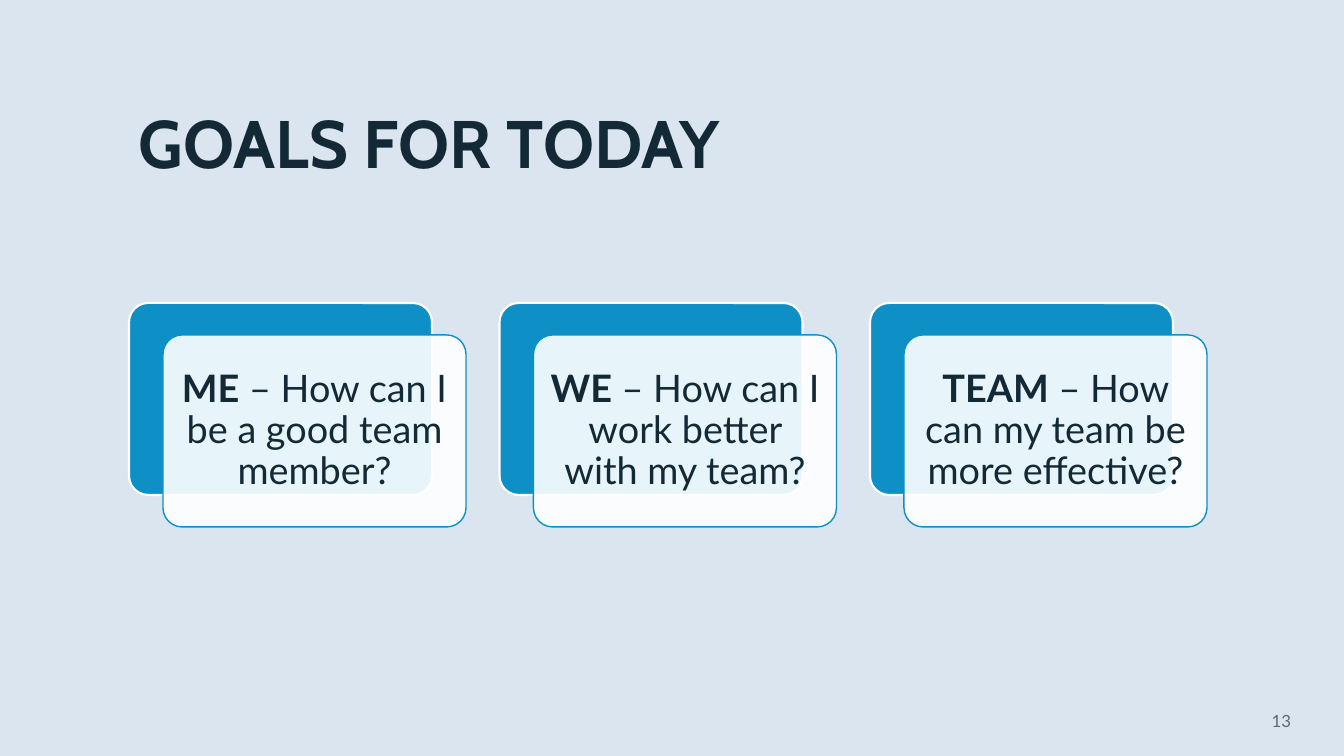
from pptx import Presentation
from pptx.dml.color import RGBColor
from pptx.enum.shapes import MSO_SHAPE
from pptx.enum.text import MSO_ANCHOR, PP_ALIGN
from pptx.oxml.ns import qn
from pptx.util import Emu, Pt
from lxml import etree

PX = 914400 / 100.8
BACKGROUND = RGBColor(0xDA, 0xE5, 0xEF)
INK = RGBColor(0x13, 0x29, 0x35)
GREY = RGBColor(0x5D, 0x68, 0x78)
BLUE = RGBColor(0x0E, 0x8F, 0xC5)
WHITE = RGBColor(0xFF, 0xFF, 0xFF)

CARD_W, CARD_H = 303, 192
CARD_LEFT, CARD_TOP = 129, 303
CARD_PITCH = 370.5
SHIFT_X, SHIFT_Y = 34, 32
GOALS = [
    ("ME", " – How can I be a good team member?"),
    ("WE", " – How can I work better with my team?"),
    ("TEAM", " – How can my team be more effective?"),
]


def px(*lengths):
    return [Emu(round(n * PX)) for n in lengths]


def write(shape, runs, size, font, color, anchor, align=PP_ALIGN.LEFT, spacing=1.0):
    """Fill the shape with one paragraph made of (text, bold) runs."""
    tf = shape.text_frame
    tf.word_wrap = True
    tf.vertical_anchor = anchor
    p = tf.paragraphs[0]
    p.alignment = align
    p.line_spacing = spacing
    for text, bold in runs:
        r = p.add_run()
        r.text = text
        r.font.size = Pt(size)
        r.font.name = font
        r.font.bold = bold
        r.font.color.rgb = color


prs = Presentation()
prs.slide_width, prs.slide_height = px(1344, 756)
s = prs.slides.add_slide(prs.slide_layouts[6])
s.background.fill.solid()
s.background.fill.fore_color.rgb = BACKGROUND

title = s.shapes.add_textbox(*px(129, 42, 1078, 146))
write(title, [("GOALS FOR TODAY", True)], 48, "Cabin", INK, MSO_ANCHOR.BOTTOM, spacing=0.9)

number = s.shapes.add_textbox(*px(1119, 701, 182, 40))
write(number, [("13", False)], 12, "Lato", GREY, MSO_ANCHOR.MIDDLE, PP_ALIGN.RIGHT)

for i, (who, question) in enumerate(GOALS):
    left = CARD_LEFT + i * CARD_PITCH
    for dx, dy, fill, line, width in (
        (0, 0, BLUE, WHITE, 1.5),
        (SHIFT_X, SHIFT_Y, WHITE, BLUE, 1),
    ):
        card = s.shapes.add_shape(MSO_SHAPE.ROUNDED_RECTANGLE,
                                  *px(left + dx, CARD_TOP + dy, CARD_W, CARD_H))
        card.shadow.inherit = False
        card.adjustments[0] = 0.1
        card.fill.solid()
        card.fill.fore_color.rgb = fill
        card.line.color.rgb = line
        card.line.width = Pt(width)

    # The front card is slightly see-through and carries the text
    color = card.fill._xPr.find(qn("a:solidFill"))[0]
    etree.SubElement(color, qn("a:alpha")).set("val", "90000")
    tf = card.text_frame
    tf.margin_left, tf.margin_top, tf.margin_right, tf.margin_bottom = px(10, 10, 10, 10)
    write(card, [(who, True), (question, False)], 27, "Lato", INK,
          MSO_ANCHOR.MIDDLE, PP_ALIGN.CENTER, 0.9)

prs.save("out.pptx")
